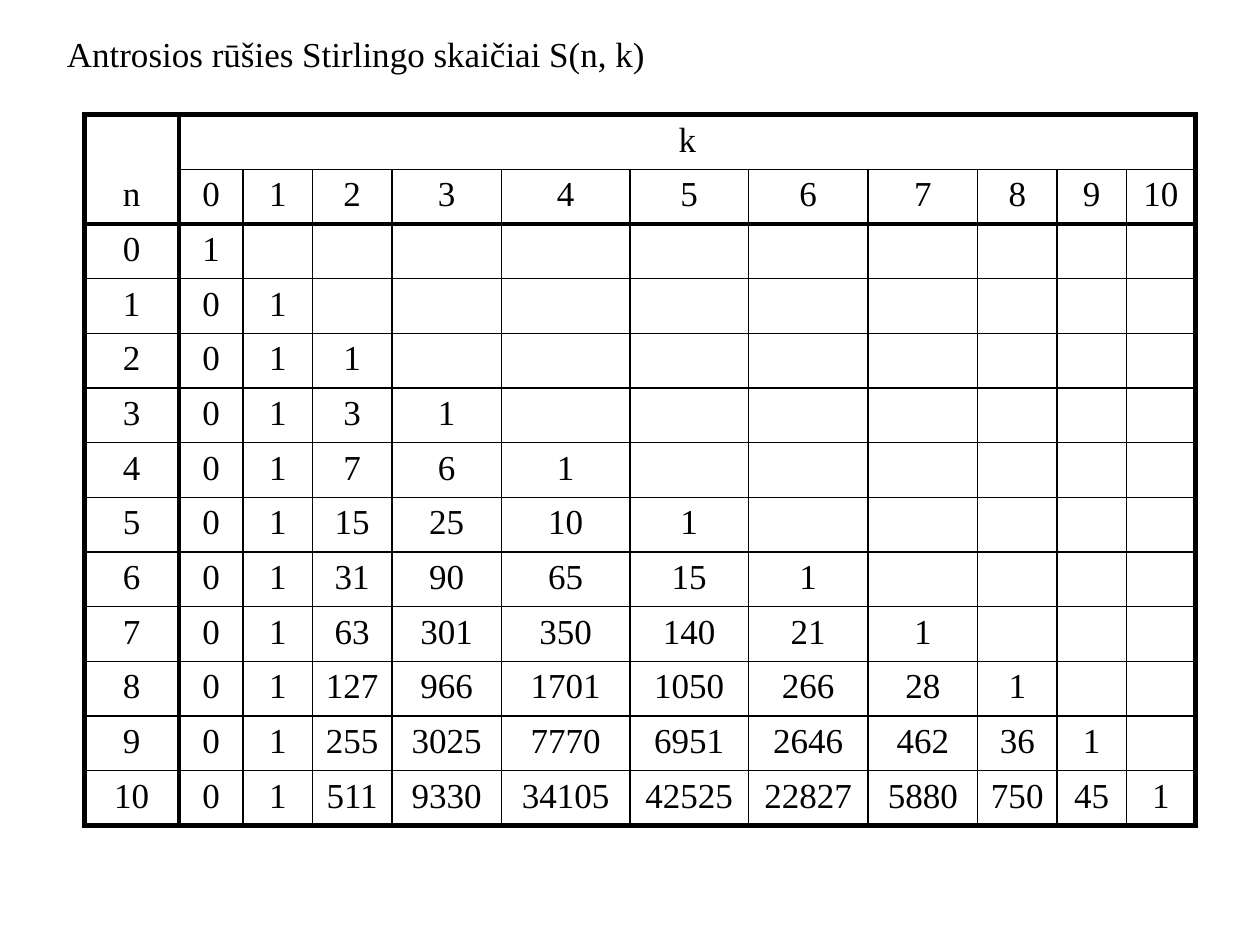
"""Build a slide with a table of Stirling numbers of the second kind."""
from lxml import etree
from pptx import Presentation
from pptx.dml.color import RGBColor
from pptx.enum.text import MSO_ANCHOR, MSO_AUTO_SIZE, PP_ALIGN
from pptx.oxml.ns import qn
from pptx.util import Inches, Pt

LEFT, CENTER = PP_ALIGN.LEFT, PP_ALIGN.CENTER
TOP = MSO_ANCHOR.TOP
GROW = MSO_AUTO_SIZE.SHAPE_TO_FIT_TEXT
BLACK = RGBColor(0, 0, 0)
FONT = "Times New Roman"
THIN, THICK = Pt(1), Pt(3)

LARGEST = 10
COLUMN_WIDTHS = [0.75, 0.51, 0.55, 0.63, 0.87, 1.02, 0.94, 0.95, 0.87, 0.63, 0.55, 0.55]
COLUMNS = len(COLUMN_WIDTHS)
ROWS = LARGEST + 3
TABLE_HEIGHT = 5.63
THICK_COLUMN_EDGES = {0, 1, COLUMNS}
THICK_ROW_EDGES = {0, 2, ROWS}


def write(text_frame, text, alignment):
    paragraph = text_frame.paragraphs[0]
    paragraph.alignment = alignment
    run = paragraph.add_run()
    run.text = text
    run.font.name = FONT
    run.font.size = Pt(20)
    run.font.color.rgb = BLACK


def add_border(cell, side, width):
    properties = cell._tc.get_or_add_tcPr()
    line = etree.SubElement(properties, qn(f"a:ln{side}"), w=str(width))
    if width:
        fill = etree.SubElement(line, qn("a:solidFill"))
        etree.SubElement(fill, qn("a:srgbClr"), val=str(BLACK))
    else:
        etree.SubElement(line, qn("a:noFill"))


presentation = Presentation()
presentation.slide_width, presentation.slide_height = Inches(10), Inches(7.5)
slide = presentation.slides.add_slide(presentation.slide_layouts[5])

title = slide.shapes.title
title.left, title.top = Inches(0.43), Inches(0.21)
title.width, title.height = Inches(9.21), Inches(0.43)
title.text_frame.word_wrap = True
title.text_frame.auto_size = GROW
title.text_frame.vertical_anchor = TOP
write(title.text_frame, "Antrosios rūšies Stirlingo skaičiai S(n, k)", LEFT)

triangle = [[1]]
for n in range(1, LARGEST + 1):
    previous = triangle[-1] + [0]
    triangle.append([0] + [k * previous[k] + previous[k - 1] for k in range(1, n + 1)])

entries = [["", "k"], ["n", *range(LARGEST + 1)]]
entries += [[n, *numbers] for n, numbers in enumerate(triangle)]

table = slide.shapes.add_table(
    ROWS, COLUMNS, Inches(0.67), Inches(0.91), Inches(sum(COLUMN_WIDTHS)), Inches(TABLE_HEIGHT)
).table
table.first_row = table.horz_banding = False
for column, width in zip(table.columns, COLUMN_WIDTHS):
    column.width = Inches(width)
for row in table.rows:
    row.height = Inches(TABLE_HEIGHT / ROWS)
table.cell(0, 1).merge(table.cell(0, COLUMNS - 1))

for row in range(ROWS):
    for column in range(COLUMNS):
        cell = table.cell(row, column)
        if cell.is_spanned:
            continue
        right = column + cell.span_width
        for side, edge in (("L", column), ("R", right)):
            add_border(cell, side, THICK if edge in THICK_COLUMN_EDGES else THIN)
        for side, edge in (("T", row), ("B", row + 1)):
            if column == 0 and edge == 1:
                add_border(cell, side, 0)
            else:
                add_border(cell, side, THICK if edge in THICK_ROW_EDGES else THIN)
        cell.fill.background()
        if column < len(entries[row]) and entries[row][column] != "":
            write(cell.text_frame, str(entries[row][column]), CENTER)

presentation.save("out.pptx")
